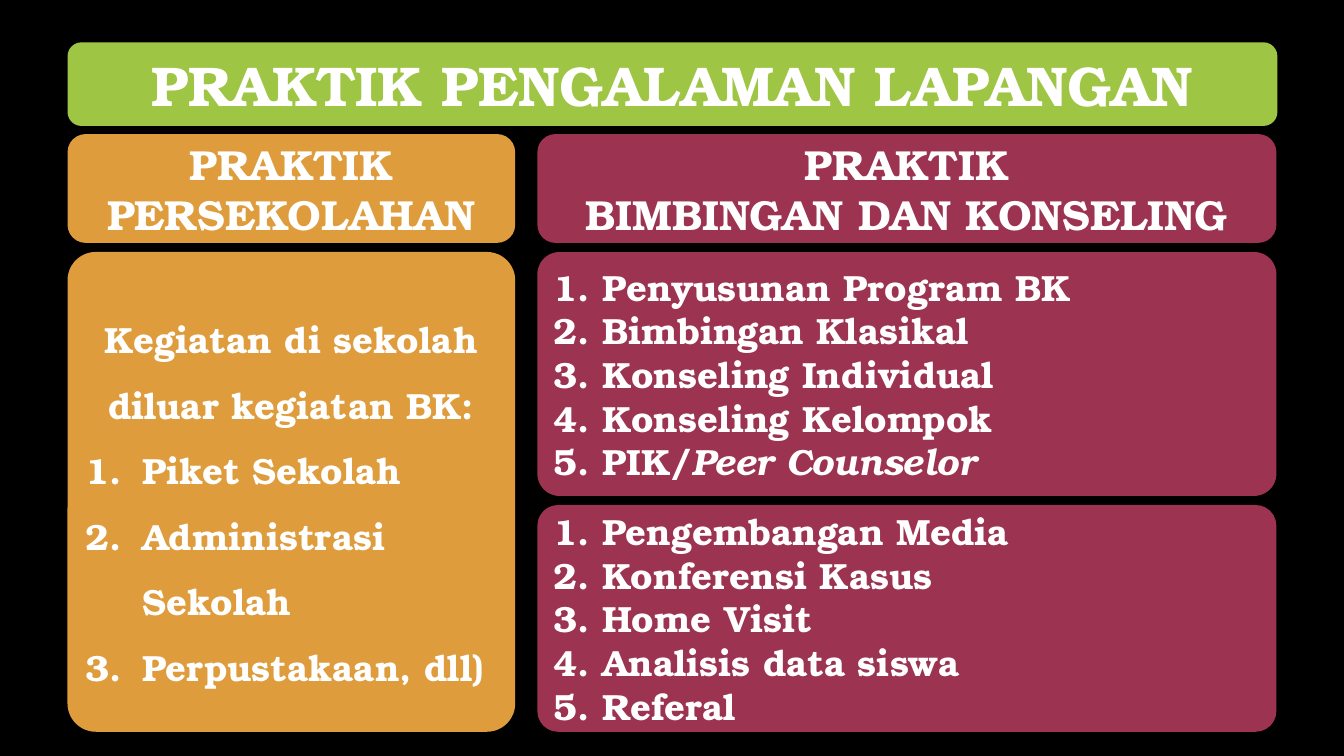
from dataclasses import dataclass

from lxml import etree
from pptx import Presentation
from pptx.dml.color import RGBColor
from pptx.enum.shapes import MSO_SHAPE
from pptx.enum.text import MSO_ANCHOR, PP_ALIGN
from pptx.oxml.ns import qn
from pptx.util import Inches, Pt

ROUND = MSO_SHAPE.ROUNDED_RECTANGLE
MIDDLE = MSO_ANCHOR.MIDDLE
LEFT, CENTER = PP_ALIGN.LEFT, PP_ALIGN.CENTER


@dataclass(frozen=True)
class Theme:
    font: str = "TeX Gyre Bonum"
    back: str = "000000"
    ink: str = "FFFFFF"
    green: str = "9EC544"
    gold: str = "DE9C3C"
    wine: str = "9C3351"
    title: int = 40
    head: int = 30
    body: int = 26


THEME = Theme()
GAP = 0.09
HEAD = 1.08
INDENT = 0.56

DUTIES = ["Piket Sekolah", "Administrasi Sekolah", "Perpustakaan, dll)"]
SERVICES = [
    ["Penyusunan Program BK"],
    ["Bimbingan Klasikal"],
    ["Konseling Individual"],
    ["Konseling Kelompok"],
    ["PIK/", "Peer Counselor"],
]
SUPPORT = [
    ["Pengembangan Media"],
    ["Konferensi Kasus"],
    ["Home Visit"],
    ["Analisis data siswa"],
    ["Referal"],
]


def add_panel(slide, box, color, corner=None):
    panel = slide.shapes.add_shape(ROUND, *[Inches(v) for v in box])
    panel.shadow.inherit = False
    panel.fill.solid()
    panel.fill.fore_color.rgb = RGBColor.from_string(color)
    panel.line.fill.background()
    if corner:
        panel.adjustments[0] = corner
    frame = panel.text_frame
    frame.word_wrap = True
    frame.vertical_anchor = MIDDLE
    return frame


def add_text(frame, *parts, size, align=CENTER, space=None, numbered=False):
    """Add one paragraph; parts after the first are set in italics."""
    first = frame.paragraphs[0]
    para = frame.add_paragraph() if first.runs else first
    para.alignment = align
    if space:
        para.line_spacing = space
    for place, part in enumerate(parts):
        run = para.add_run()
        run.text = part
        font = run.font
        font.name = THEME.font
        font.size = Pt(size)
        font.bold = True
        if place:
            font.italic = True
        font.color.rgb = RGBColor.from_string(THEME.ink)
    if numbered:
        props = para._p.get_or_add_pPr()
        props.set("marL", str(Inches(INDENT)))
        props.set("indent", str(-Inches(INDENT)))
        bullet = etree.SubElement(props, qn("a:buAutoNum"))
        bullet.set("type", "arabicPeriod")


def add_title(slide, box):
    frame = add_panel(slide, box, THEME.green)
    add_text(frame, "PRAKTIK PENGALAMAN LAPANGAN", size=THEME.title)


def add_head(slide, box, color, topic):
    frame = add_panel(slide, box, color)
    for line in ("PRAKTIK", topic):
        add_text(frame, line, size=THEME.head)


def add_list(slide, box, items):
    frame = add_panel(slide, box, THEME.wine, 0.091)
    for number, (start, *rest) in enumerate(items, 1):
        add_text(frame, f"{number}. {start}", *rest,
                 size=THEME.body, align=LEFT)


def add_school(slide, box):
    left, top, width, height = box
    add_head(slide, (left, top, width, HEAD), THEME.gold, "PERSEKOLAHAN")
    drop = HEAD + GAP
    body = (left, top + drop, width, height - drop)
    frame = add_panel(slide, body, THEME.gold, 0.063)
    add_text(frame, "Kegiatan di sekolah diluar kegiatan BK:",
             size=THEME.body, space=1.5)
    for duty in DUTIES:
        add_text(frame, duty, size=THEME.body, align=LEFT,
                 space=1.5, numbered=True)


def add_guidance(slide, box):
    left, top, width, height = box
    add_head(slide, (left, top, width, HEAD), THEME.wine,
             "BIMBINGAN DAN KONSELING")
    upper = top + HEAD + GAP
    tall = 2.42
    lower = upper + tall + GAP
    add_list(slide, (left, upper, width, tall), SERVICES)
    add_list(slide, (left, lower, width, top + height - lower), SUPPORT)


def main():
    deck = Presentation()
    deck.slide_width, deck.slide_height = Inches(13.33), Inches(7.5)
    slide = deck.slides.add_slide(deck.slide_layouts[6])
    fill = slide.background.fill
    fill.solid()
    fill.fore_color.rgb = RGBColor.from_string(THEME.back)

    add_title(slide, (0.67, 0.42, 12, 0.83))
    add_school(slide, (0.67, 1.33, 4.44, 5.93))
    add_guidance(slide, (5.33, 1.33, 7.33, 5.93))
    deck.save("out.pptx")


if __name__ == "__main__":
    main()
